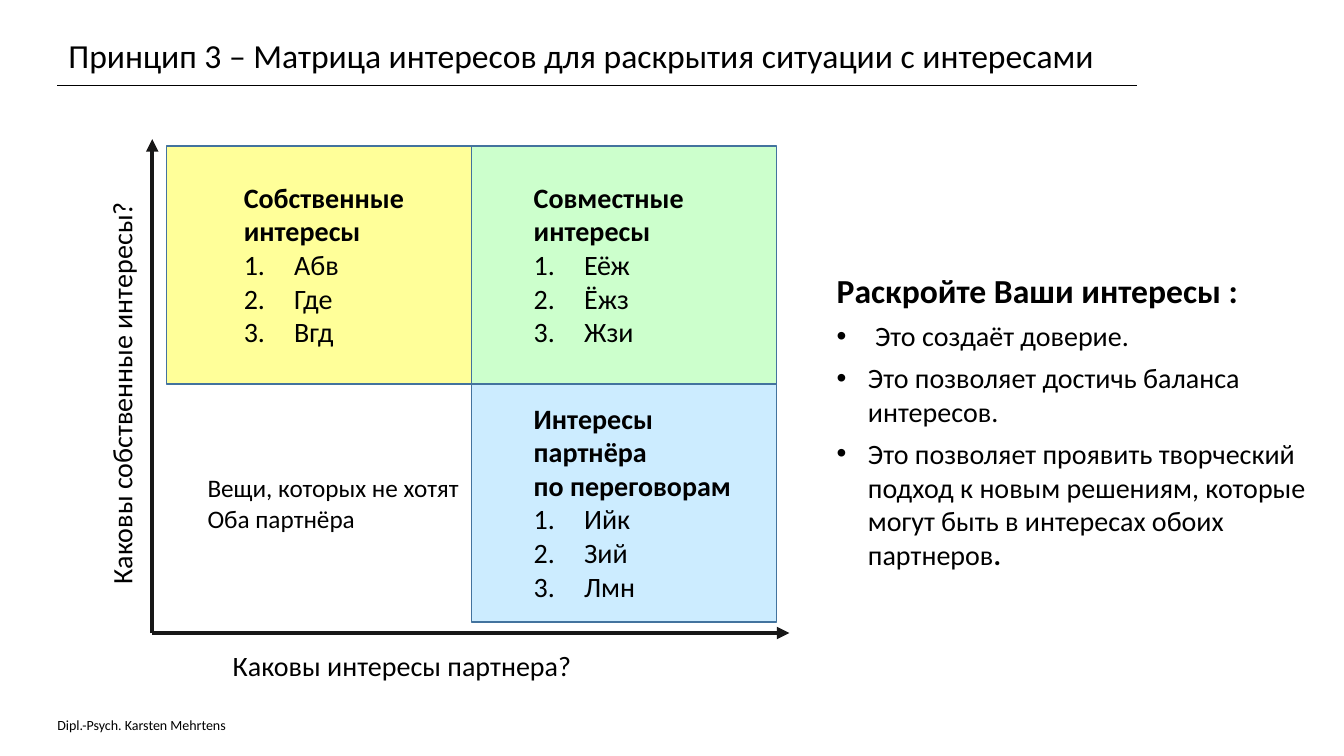
from lxml.etree import SubElement
from pptx import Presentation
from pptx.dml.color import RGBColor
from pptx.enum.shapes import MSO_CONNECTOR as CONN, MSO_SHAPE as SHAPE
from pptx.oxml.ns import qn
from pptx.util import Inches, Pt

WIDTH, HEIGHT = 13.33, 7.5
FONT = "Calibri"
BLACK, AXIS, BORDER = "000000", "181717", "43739E"
CELLS = [
    (1, 1, "CCECFF", 0.52, 0.12, ["Интересы партнёра", "по переговорам"], ["Ийк", "Зий", "Лмн"]),
    (0, 0, "FFFF99", 0.67, 0.29, ["Собственные", "интересы"], ["Aбв", "Где", "Вгд"]),
    (1, 0, "CCFFCC", 0.52, 0.29, ["Совместные", "интересы"], ["Еёж", "Ёжз", "Жзи"]),
]
BENEFITS = [
    (0.38, ["Это создаёт доверие."]),
    (0.31, ["Это позволяет достичь баланса интересов."]),
    (0.31, ["Это позволяет проявить творческий подход к новым решениям, "
            "которые могут быть в интересах обоих партнеров", "."]),
]


def color(hex_text):
    """Turn a hex string into a colour."""
    return RGBColor.from_string(hex_text)


def add_line(slide, start, end, hex_text, width, arrow=False):
    """Draw a straight line, with an arrowhead at its end if asked."""
    line = slide.shapes.add_connector(CONN.STRAIGHT, *map(Inches, start + end))
    line.line.color.rgb = color(hex_text)
    line.line.width = Pt(width)
    if arrow:
        SubElement(line.line._get_or_add_ln(), qn("a:tailEnd"), type="triangle")
    SubElement(line._element.spPr, qn("a:effectLst"))


def add_run(p, text, size, bold=False):
    """Append a formatted run to a paragraph."""
    r = p.add_run()
    r.text = text
    r.font.name, r.font.size, r.font.bold = FONT, Pt(size), bold
    r.font.color.rgb = color(BLACK)


def add_text(slide, box, lines, size, bold=False, wrap=False):
    """Place a text box with one paragraph per line and return it."""
    sp = slide.shapes.add_textbox(*map(Inches, box))
    tf = sp.text_frame
    tf.word_wrap = wrap
    for i, text in enumerate(lines):
        p = tf.paragraphs[0] if i == 0 else tf.add_paragraph()
        add_run(p, text, size, bold)
    return sp


def add_item(tf, runs, size, indent, tag, **bullet):
    """Append a bulleted or numbered paragraph with a hanging indent."""
    p = tf.add_paragraph()
    pPr = p._p.get_or_add_pPr()
    pPr.set("marL", str(Inches(indent)))
    pPr.set("indent", str(-Inches(indent)))
    SubElement(pPr, qn("a:buFont"), typeface="Arial" if tag == "a:buChar" else "+mj-lt")
    SubElement(pPr, qn(tag), **bullet)
    for i, text in enumerate(runs):
        add_run(p, text, size, bold=i > 0)
    return p


def add_frame(slide):
    """Place the title, its rule and the author line."""
    add_text(slide, (0.47, 7.06, 1.91, 0.27), ["Dipl.-Psych. Karsten Mehrtens"], 10)
    add_line(slide, (0.57, 0.85), (11.28, 0.85), BLACK, 0.5)
    add_text(slide, (0.58, 0.3, 10.55, 0.5),
             ["Принцип 3 – Матрица интересов для раскрытия ситуации с интересами"], 24)


def add_matrix(slide, x, y, w, h):
    """Draw the two-by-two matrix of interests with its axes in a box."""
    cell_w, cell_h = w / 2, h / 2
    origin = (x - 0.14, y + h + 0.11)
    add_line(slide, origin, (origin[0], y - 0.07), AXIS, 3, arrow=True)
    add_line(slide, origin, (x + w + 0.13, origin[1]), AXIS, 3, arrow=True)
    for col, row, fill, *_ in CELLS:
        box = x + col * cell_w, y + row * cell_h, cell_w, cell_h
        sp = slide.shapes.add_shape(SHAPE.RECTANGLE, *map(Inches, box))
        sp.shadow.inherit = False
        sp.fill.solid()
        sp.fill.fore_color.rgb = color(fill)
        sp.line.color.rgb = color(BORDER)
        sp.line.width = Pt(1)
    for col, row, _, dx, dy, heading, items in CELLS:
        box = x + col * cell_w + dx, y + row * cell_h + dy, cell_w - dx, 1.78
        tf = add_text(slide, box, heading, 20, bold=True).text_frame
        for item in items:
            add_item(tf, [item], 20, 0.5, "a:buAutoNum", type="arabicPeriod")
    add_text(slide, (x + 0.31, y + cell_h + 0.83, 2.81, 0.71),
             ["Вещи, которых не хотят", "Оба партнёра"], 18)
    add_text(slide, (x + 0.56, y + h + 0.21, 3.59, 0.44), ["Каковы интересы партнера?"], 20)
    label = add_text(slide, (x - 2.73, y + 1.94, 4.57, 0.44),
                     ["Каковы собственные интересы?"], 20, wrap=True)
    label.rotation = 270


def add_benefits(slide, x, y, w, h):
    """List the benefits of disclosing interests in a box."""
    tf = add_text(slide, (x, y, w, h), ["Раскройте Ваши интересы :"], 24, True, True).text_frame
    tf.paragraphs[0].space_after = Pt(6)
    for indent, runs in BENEFITS:
        add_item(tf, runs, 20, indent, "a:buChar", char="•").space_after = Pt(6)


def main():
    """Build and save the slide."""
    prs = Presentation()
    prs.slide_width, prs.slide_height = Inches(WIDTH), Inches(HEIGHT)
    slide = prs.slides.add_slide(prs.slide_layouts[6])
    add_frame(slide)
    add_matrix(slide, 1.65, 1.45, 6.05, 4.72)
    add_benefits(slide, 8.2, 2.63, 4.92, 3.11)
    prs.save("out.pptx")


if __name__ == "__main__":
    main()
